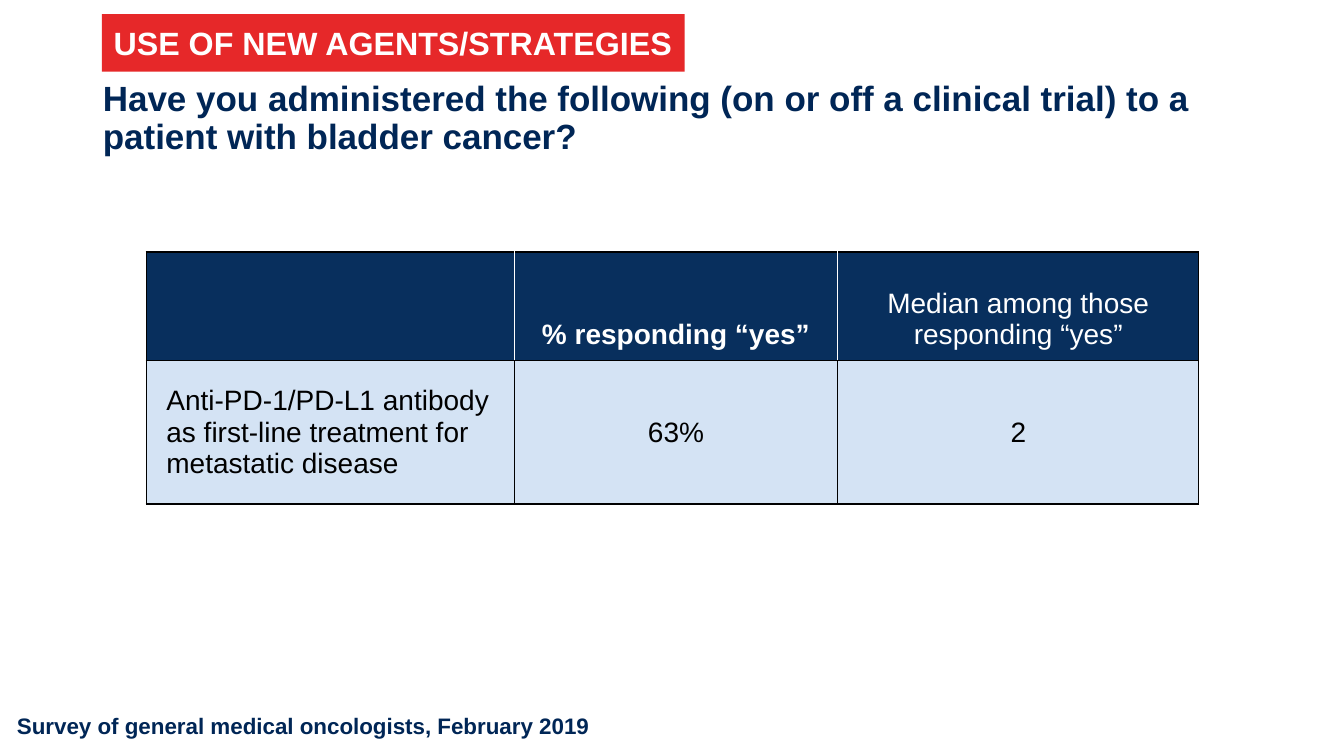
"""Build the survey slide on use of new agents and strategies in bladder cancer."""
from dataclasses import dataclass

import lxml.etree
import pptx
import pptx.dml.color
import pptx.enum.shapes
import pptx.enum.text
import pptx.oxml.ns
import pptx.slide
import pptx.table
import pptx.text.text
import pptx.util

Inches = pptx.util.Inches
RGBColor = pptx.dml.color.RGBColor
Align = pptx.enum.text.PP_ALIGN
Anchor = pptx.enum.text.MSO_ANCHOR

NAVY = RGBColor(0x00, 0x26, 0x56)
HEADER_BLUE = RGBColor(0x08, 0x2F, 0x5D)
PALE_BLUE = RGBColor(0xD4, 0xE3, 0xF4)
RED = RGBColor(0xE6, 0x28, 0x29)
WHITE = RGBColor(0xFF, 0xFF, 0xFF)
BLACK = RGBColor(0x00, 0x00, 0x00)

COLUMN_WIDTHS = (3.65, 3.21, 3.58)
ROW_HEIGHTS = (1.08, 1.42)


@dataclass(frozen=True)
class Entry:
    text: str
    bold: bool = False
    align: Align = Align.CENTER


ENTRIES = (
    (
        Entry(""),
        Entry("% responding “yes”", bold=True),
        Entry("Median among those\nresponding “yes”"),
    ),
    (
        Entry("Anti-PD-1/PD-L1 antibody as first-line treatment for metastatic disease", align=Align.LEFT),
        Entry("63%"),
        Entry("2"),
    ),
)


def write(frame: pptx.text.text.TextFrame, text: str, size: float, color: RGBColor,
          bold: bool = True, align: Align = Align.LEFT) -> None:
    frame.text = text
    frame.word_wrap = True
    for paragraph in frame.paragraphs:
        paragraph.alignment = align
        paragraph.font.name = "Arial"
        paragraph.font.size = pptx.util.Pt(size)
        paragraph.font.bold = bold
        paragraph.font.color.rgb = color


def add_border(cell: pptx.table._Cell, side: str, color: RGBColor) -> None:
    qn = pptx.oxml.ns.qn
    properties = cell._tc.get_or_add_tcPr()
    line = lxml.etree.SubElement(properties, qn(f"a:ln{side}"), w=str(pptx.util.Pt(1)))
    fill = lxml.etree.SubElement(line, qn("a:solidFill"))
    lxml.etree.SubElement(fill, qn("a:srgbClr"), val=str(color))


def fill_cell(cell: pptx.table._Cell, entry: Entry, row: int, column: int) -> None:
    header = row == 0
    last_column = len(COLUMN_WIDTHS) - 1
    inner_sides = {"L": column > 0, "R": column < last_column}
    for side in "LRTB":
        add_border(cell, side, WHITE if header and inner_sides.get(side) else BLACK)
    cell.fill.solid()
    cell.fill.fore_color.rgb = HEADER_BLUE if header else PALE_BLUE
    cell.margin_left = cell.margin_right = Inches(0.2)
    cell.margin_top = cell.margin_bottom = Inches(0.1)
    cell.vertical_anchor = Anchor.BOTTOM if header else Anchor.MIDDLE
    write(cell.text_frame, entry.text, 20, WHITE if header else BLACK, entry.bold, entry.align)


def add_responses(slide: pptx.slide.Slide) -> None:
    responses = slide.shapes.add_table(
        len(ROW_HEIGHTS), len(COLUMN_WIDTHS), Inches(1.45), Inches(2.5),
        Inches(sum(COLUMN_WIDTHS)), Inches(sum(ROW_HEIGHTS))).table
    for column, width in zip(responses.columns, COLUMN_WIDTHS):
        column.width = Inches(width)
    for row, height in zip(responses.rows, ROW_HEIGHTS):
        row.height = Inches(height)
    for row, entries in enumerate(ENTRIES):
        for column, entry in enumerate(entries):
            fill_cell(responses.cell(row, column), entry, row, column)


def main() -> None:
    deck = pptx.Presentation()
    deck.slide_width, deck.slide_height = Inches(13.33), Inches(7.5)
    slide = deck.slides.add_slide(deck.slide_layouts.get_by_name("Title Only"))

    survey = slide.shapes.add_textbox(Inches(0.07), Inches(7.02), Inches(6.76), Inches(0.37))
    write(survey.text_frame, "Survey of general medical oncologists, February 2019", 16, NAVY)

    question = slide.shapes.title
    question.left, question.top = Inches(0.92), Inches(0.71)
    question.width, question.height = Inches(11.5), Inches(0.95)
    write(question.text_frame,
          "Have you administered the following (on or off a clinical trial) to a patient with bladder cancer?",
          25, NAVY)
    question.text_frame.vertical_anchor = Anchor.MIDDLE
    question.text_frame.auto_size = pptx.enum.text.MSO_AUTO_SIZE.NONE
    question.text_frame.paragraphs[0].line_spacing = 0.9

    add_responses(slide)

    topic = slide.shapes.add_shape(pptx.enum.shapes.MSO_SHAPE.RECTANGLE,
                                   Inches(1.01), Inches(0.14), Inches(5.78), Inches(0.57))
    topic.shadow.inherit = False
    topic.fill.solid()
    topic.fill.fore_color.rgb = RED
    topic.line.fill.background()
    write(topic.text_frame, "USE OF NEW AGENTS/STRATEGIES", 23, WHITE, align=Align.CENTER)
    topic.text_frame.vertical_anchor = Anchor.MIDDLE

    deck.save("out.pptx")


if __name__ == "__main__":
    main()
